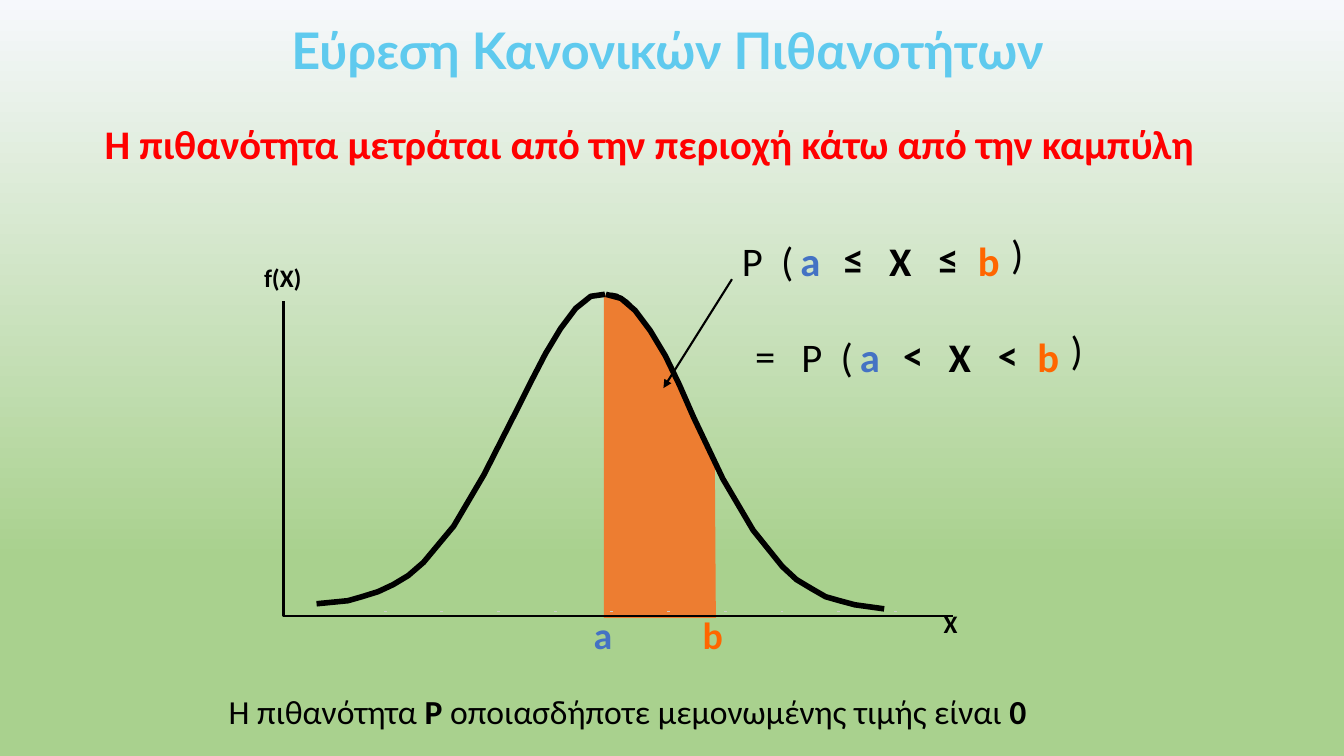
from dataclasses import dataclass

from lxml import etree
from pptx import Presentation
from pptx import util as u
from pptx.dml.color import RGBColor
from pptx.enum import shapes, text
from pptx.oxml import ns


@dataclass(frozen=True)
class Theme:
    sky: str = "F6F8FC"
    green: str = "A9D18E"
    title: str = "5FCAEE"
    red: str = "FF0000"
    black: str = "000000"
    tick: str = "CDCDCD"
    area: str = "ED7D31"
    lower: str = "4472C4"
    upper: str = "FF6600"
    title_font: str = "Lato"
    body_font: str = "Calibri"
    title_size: int = 36
    formula_size: int = 29
    bound_size: int = 27
    note_size: int = 24
    axis_size: int = 18


theme = Theme()
prs = Presentation()
prs.slide_width, prs.slide_height = u.Inches(13.33), u.Inches(7.5)
s = prs.slides.add_slide(prs.slide_layouts[6])


def add_text(box, runs, size, font=theme.body_font, wrap=False):
    """Place a text box; runs are (text, colour, bold)."""
    sp = s.shapes.add_textbox(*map(u.Inches, box))
    tf = sp.text_frame
    tf.word_wrap = wrap
    tf.auto_size = text.MSO_AUTO_SIZE.SHAPE_TO_FIT_TEXT
    p = tf.paragraphs[0]
    for words, color, bold in runs:
        r = p.add_run()
        r.text = words
        r.font.name, r.font.size, r.font.bold = font, u.Pt(size), bold
        r.font.color.rgb = RGBColor.from_string(color)
    return sp


def add_line(start, end, color, width):
    """Place a straight connector without a shadow."""
    line = s.shapes.add_connector(
        shapes.MSO_CONNECTOR.STRAIGHT, *map(u.Inches, start + end))
    line.line.color.rgb = RGBColor.from_string(color)
    line.line.width = u.Pt(width)
    etree.SubElement(line.element.spPr, ns.qn("a:effectLst"))
    return line


# Background
fill = s.background.fill
fill.gradient()
fill.gradient_angle = 270
for stop, position, color in zip(fill.gradient_stops, (0, 0.74), (theme.sky, theme.green)):
    stop.position = position
    stop.color.rgb = RGBColor.from_string(color)

# Title and subtitle
title = add_text((2.89, 0.17, 7.54, 0.62),
                 [("Εύρεση Κανονικών Πιθανοτήτων", theme.title, True)],
                 theme.title_size, theme.title_font, wrap=True)
tf = title.text_frame
tf.vertical_anchor = text.MSO_ANCHOR.MIDDLE
tf.margin_left = tf.margin_right = tf.margin_bottom = 0
tf.margin_top = u.Inches(0.01)
subtitle = add_text(
    (0.94, 1.13, 11.44, 0.59),
    [("Η πιθανότητα μετράται από την περιοχή κάτω από την καμπύλη", theme.red, True)],
    theme.formula_size, wrap=True)
for sp in (title, subtitle):
    sp.text_frame.paragraphs[0].alignment = text.PP_ALIGN.JUSTIFY

# Shaded area, curve and axes: points, line width (None means filled)
area = [(5.99, 2.92), (6.17, 2.98), (6.29, 3.07), (6.48, 3.35), (6.64, 3.64),
        (6.82, 4.04), (6.97, 4.38), (7.09, 4.61), (7.1, 6.13), (5.99, 6.13)]
peak = [(6.01, 2.92), (6.07, 2.91), (6.12, 2.92), (6.17, 2.95), (6.22, 2.98),
        (6.26, 3.02), (6.29, 3.08), (6.42, 3.24)]
right_half = [(8.77, 6.04), (8.48, 6), (8.33, 5.96), (8.19, 5.92), (8.05, 5.84),
              (7.9, 5.75), (7.76, 5.62), (7.47, 5.26), (7.17, 4.75), (6.88, 4.14),
              (6.74, 3.82), (6.6, 3.53), (6.45, 3.28), (6.3, 3.08), (6.16, 2.96),
              (6.01, 2.92)]
left_half = [(3.14, 5.99), (3.45, 5.96), (3.59, 5.92), (3.75, 5.87), (3.9, 5.8),
             (4.05, 5.71), (4.2, 5.58), (4.5, 5.22), (4.8, 4.71), (5.11, 4.1),
             (5.26, 3.8), (5.41, 3.51), (5.56, 3.26), (5.71, 3.06), (5.86, 2.94),
             (6, 2.92)]
axes = [(2.81, 2.99), (2.81, 6.11), (9.45, 6.11)]
for points, width in ((area, None), (peak, 1), (right_half, 4), (left_half, 4), (axes, 2)):
    start, *rest = [(u.Inches(x), u.Inches(y)) for x, y in points]
    outline = s.shapes.build_freeform(*start)
    outline.add_line_segments(rest, close=width is None)
    sp = outline.convert_to_shape()
    sp.shadow.inherit = False
    if width is None:
        sp.fill.solid()
        sp.fill.fore_color.rgb = RGBColor.from_string(theme.area)
        sp.line.fill.background()
    else:
        sp.fill.background()
        sp.line.color.rgb = RGBColor.from_string(theme.black)
        sp.line.width = u.Pt(width)

# Tick marks on the X axis
for i in range(10):
    x = 3.82 + i * 5.06 / 9
    add_line((x, 6.06), (x, 6.07), theme.tick, 2)

# Axis and bound labels
for words, box, color, size in (
        ("a", (5.79, 6.02, 0.39, 0.55), theme.lower, theme.bound_size),
        ("b", (6.87, 6.02, 0.47, 0.55), theme.upper, theme.bound_size),
        ("X", (9.26, 5.99, 0.4, 0.4), theme.black, theme.axis_size),
        ("f(X)", (2.52, 2.55, 0.58, 0.4), theme.black, theme.axis_size)):
    add_text(box, [(words, color, True)], size)

# Formula: both rows share the same symbol positions
for left, top, sign in ((7.26, 2.29, "≤"), (7.85, 3.24, "<")):
    for words, dx, dy, width, color, bold in (
            ("P", 0, 0, 0.48, theme.black, False),
            ("(", 0.39, 0, 0.38, theme.black, False),
            ("a", 0.58, 0, 0.4, theme.lower, True),
            (sign, 1.01, -0.02, 0.47, theme.black, True),
            ("X", 1.46, 0, 0.5, theme.black, True),
            (sign, 1.95, -0.02, 0.47, theme.black, True),
            ("b", 2.34, 0, 0.49, theme.upper, True),
            (")", 2.67, -0.07, 0.38, theme.black, False)):
        add_text((left + dx, top + dy, width, 0.59), [(words, color, bold)],
                 theme.formula_size)
add_text((7.39, 3.23, 0.47, 0.59), [("=", theme.black, False)], theme.formula_size)

# Arrow from the formula to the area
arrow = add_line((7.26, 2.77), (6.58, 3.85), theme.black, 1.5)
etree.SubElement(arrow.element.spPr.find(ns.qn("a:ln")), ns.qn("a:tailEnd"), type="triangle")

# Closing note
add_text((2.17, 6.81, 8.39, 0.5),
         [("Η πιθανότητα ", theme.black, False), ("P ", theme.black, True),
          ("οποιασδήποτε μεμονωμένης τιμής είναι ", theme.black, False),
          ("0", theme.black, True)],
         theme.note_size, wrap=True)

prs.save("out.pptx")
